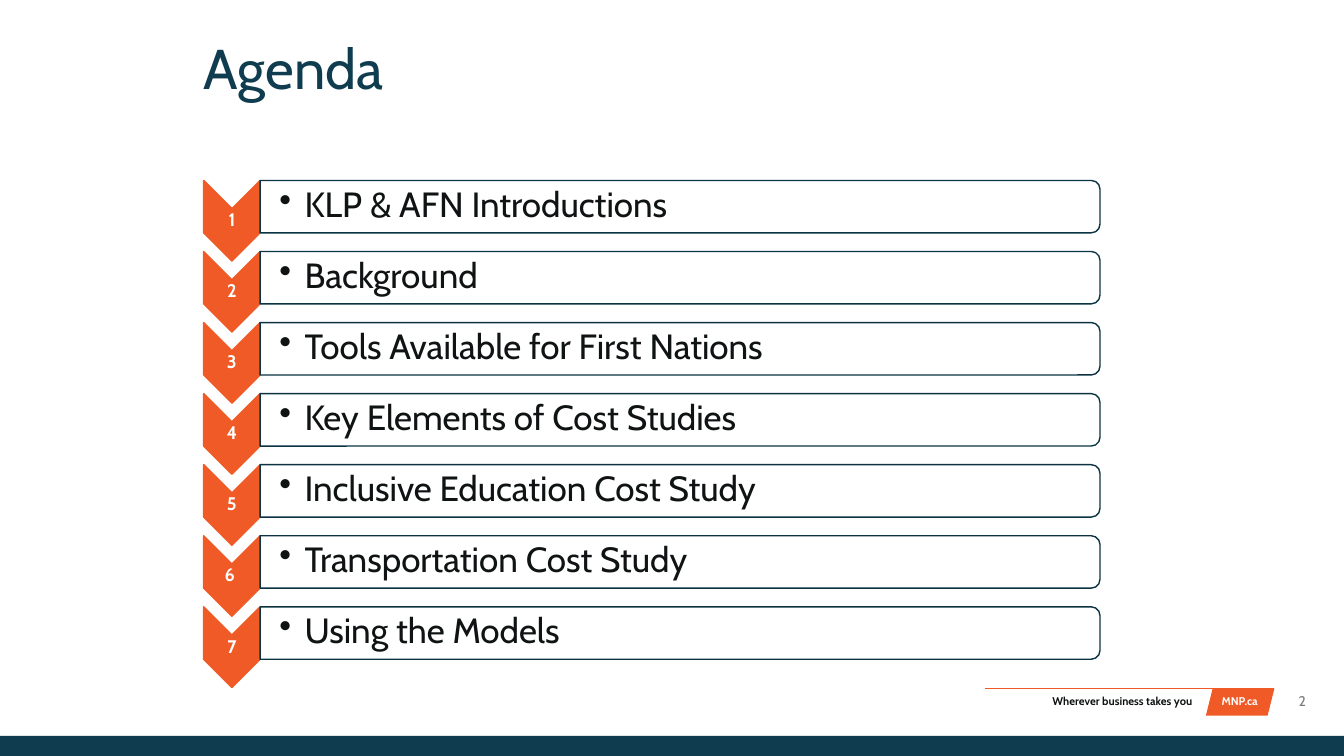
from pptx import Presentation
from pptx.dml.color import RGBColor
from pptx.enum.shapes import MSO_CONNECTOR, MSO_SHAPE
from pptx.enum.text import MSO_ANCHOR, PP_ALIGN
from pptx.oxml.ns import qn
from pptx.util import Inches, Pt
from lxml import etree

LEFT, MID, RIGHT = PP_ALIGN.LEFT, PP_ALIGN.CENTER, PP_ALIGN.RIGHT
TOP, CENTER = MSO_ANCHOR.TOP, MSO_ANCHOR.MIDDLE
CHEVRON, PANEL = MSO_SHAPE.CHEVRON, MSO_SHAPE.ROUND_2_SAME_RECTANGLE
SLANT, RECT = MSO_SHAPE.PARALLELOGRAM, MSO_SHAPE.RECTANGLE

COLORS = {
    "orange": "EF5A27", "navy": "0F3C4F", "edge": "0C3343",
    "ink": "0F1313", "gray": "797979", "white": "FFFFFF",
}
RGB = {name: RGBColor.from_string(code) for name, code in COLORS.items()}

deck = Presentation()
deck.slide_width, deck.slide_height = Inches(13.33), Inches(7.5)
slide = deck.slides.add_slide(deck.slide_layouts[6])


def add_box(kind, x, y, w, h, fill, edge=None, turn=0):
    """Place a shape by its visible bounds; a quarter turn swaps its sides."""
    if turn:
        x, y, w, h = x + (w - h) / 2, y + (h - w) / 2, h, w
    box = slide.shapes.add_shape(kind, Inches(x), Inches(y), Inches(w), Inches(h))
    box.rotation = turn
    box.shadow.inherit = False
    box.fill.solid()
    box.fill.fore_color.rgb = RGB[fill]
    if edge:
        box.line.color.rgb = RGB[edge]
        box.line.width = Pt(1)
    else:
        box.line.fill.background()


def add_text(text, x, y, w, h, size, color, align=LEFT, anchor=TOP,
             pads=(0, 0.05, 0, 0.05), bold=False, lead=None):
    box = slide.shapes.add_textbox(Inches(x), Inches(y), Inches(w), Inches(h))
    frame = box.text_frame
    frame.word_wrap = True
    frame.vertical_anchor = anchor
    (frame.margin_left, frame.margin_top,
     frame.margin_right, frame.margin_bottom) = map(Inches, pads)
    para = frame.paragraphs[0]
    para.alignment = align
    if lead:
        para.line_spacing = lead
    run = para.add_run()
    run.text = text
    run.font.name = "Cabin"
    run.font.size = Pt(size)
    run.font.bold = bold
    run.font.color.rgb = RGB[color]
    return para


# Footer
add_box(SLANT, 11.96, 6.83, 0.68, 0.27, "orange")
add_text("MNP.ca", 12, 6.84, 0.59, 0.24, 8, "white", MID, bold=True)
rule = slide.shapes.add_connector(
    MSO_CONNECTOR.STRAIGHT, Inches(9.77), Inches(6.83), Inches(12.64), Inches(6.83))
rule.line.color.rgb = RGB["orange"]
rule.line.width = Pt(1)
etree.SubElement(rule._element.spPr, qn("a:effectLst"))
add_box(RECT, 0, 7.3, 13.33, 0.2, "navy")
add_text("Wherever business takes you", 9.77, 6.84, 2.06, 0.24, 8, "ink", RIGHT, bold=True)
add_text("2", 12.64, 6.82, 0.55, 0.27, 10, "gray", MID, CENTER)

# Title
add_text("Agenda", 2.02, 0.41, 9.26, 0.61, 40, "navy", pads=(0, 0, 0, 0), lead=0.9)

# Agenda rows
topics = [
    "KLP & AFN Introductions",
    "Background",
    "Tools Available for First Nations",
    "Key Elements of Cost Studies",
    "Inclusive Education Cost Study",
    "Transportation Cost Study",
    "Using the Models",
]
first, last = 1.79, 6.02
step = (last - first) / (len(topics) - 1)
for i, topic in enumerate(topics):
    y = first + i * step
    add_box(CHEVRON, 2.02, y, 0.56, 0.8, "orange", "orange", turn=90)
    label = "6 " if i == 5 else str(i + 1)
    add_text(label, 2.02, y + 0.28, 0.56, 0.24, 13, "white", MID, CENTER,
             (0.01, 0.01, 0.01, 0.01), bold=True, lead=0.9)
    add_box(PANEL, 2.58, y, 8.33, 0.52, "white", "edge", turn=90)
    para = add_text(topic, 2.58, y + 0.02, 8.31, 0.47, 25, "ink", LEFT, CENTER,
                    (0.19, 0.02, 0.02, 0.02), lead=0.9)
    props = para._p.get_or_add_pPr()
    props.set("marL", str(Inches(0.25)))
    props.set("indent", str(Inches(-0.25)))
    etree.SubElement(props, qn("a:buChar"), char="•")

deck.save("out.pptx")
